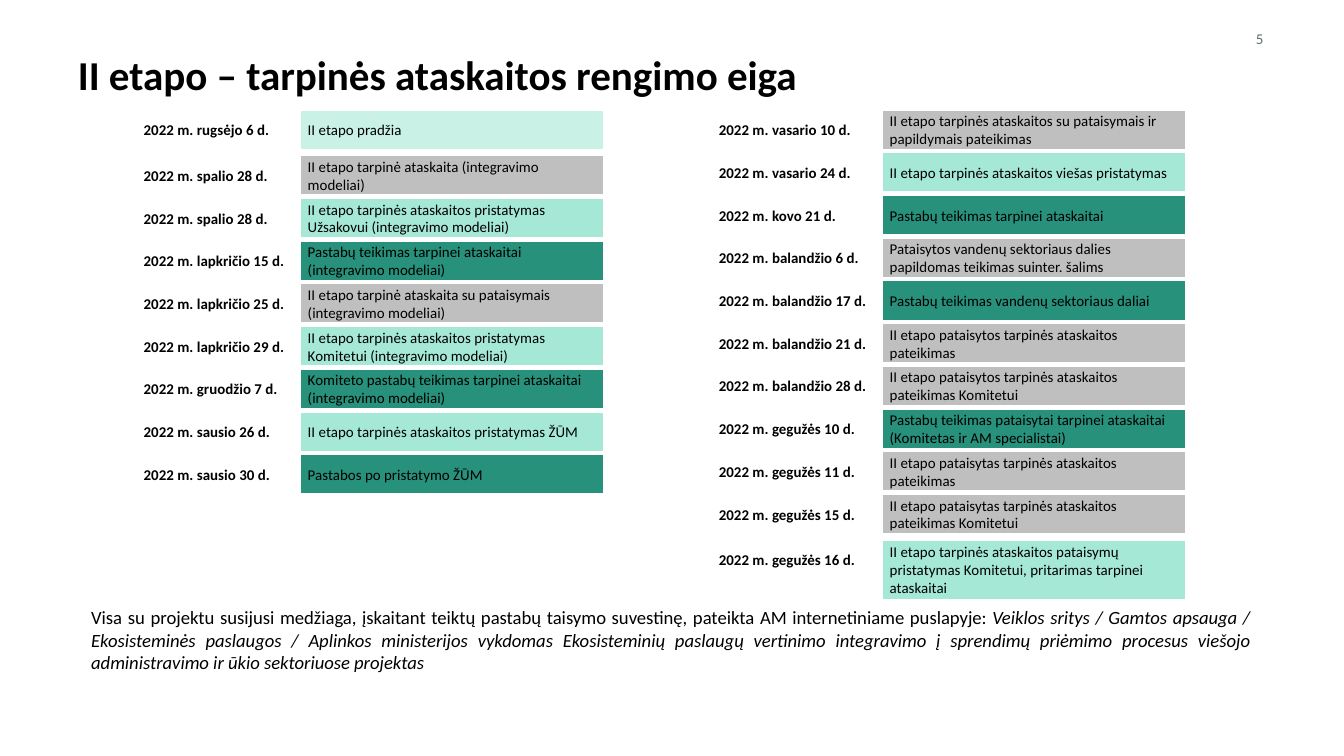
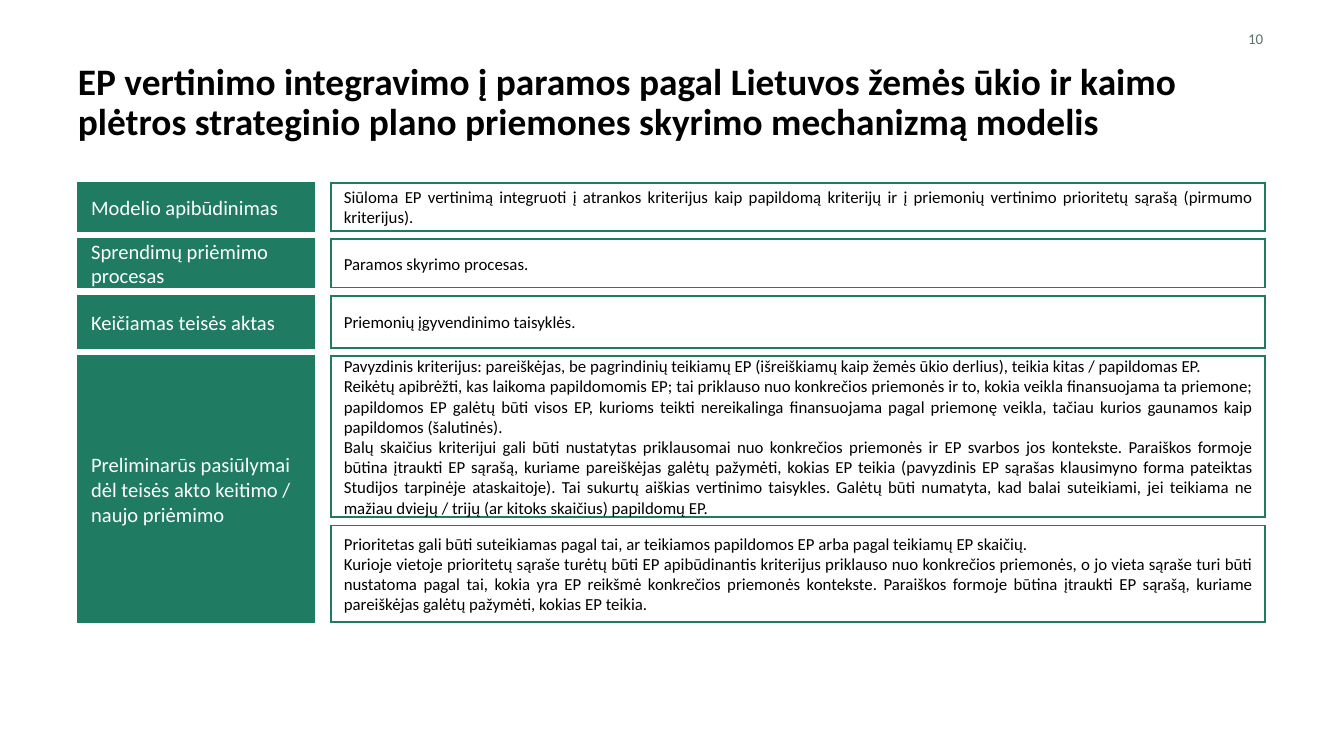
from lxml import etree
from pptx import Presentation, util as u
from pptx.dml.color import RGBColor
from pptx.enum import shapes, text
from pptx.oxml import ns

WIDTH, ASPECT = 10, 16 / 9
MARGIN, CONTENT_WIDTH = 0.58, 8.82
FONT = "Calibri"
COLOURS = {
    "text": "000000", "number": "5A7268", "white": "FFFFFF", "model": "1F7B61",
    "start": "C9F1E6", "report": "BFBFBF", "meeting": "A5E8D6", "remarks": "27917B",
}

TIMELINE_TITLE = "II etapo – tarpinės ataskaitos rengimo eiga"
TIMELINE = [
    {"date_left": 0.97, "event_left": 2.25, "groups": [
        (0.83, 0.27, [("2022 m. rugsėjo 6 d.", "start", "II etapo pradžia")]),
        (1.17, 0.27, [
            ("2022 m. spalio 28 d.", "report", "II etapo tarpinė ataskaita (integravimo modeliai)"),
            ("2022 m. spalio 28 d.", "meeting",
             "II etapo tarpinės ataskaitos pristatymas Užsakovui (integravimo modeliai)"),
            ("2022 m. lapkričio 15 d.", "remarks",
             "Pastabų teikimas tarpinei ataskaitai (integravimo modeliai)"),
            ("2022 m. lapkričio 25 d.", "report",
             "II etapo tarpinė ataskaita su pataisymais (integravimo modeliai)"),
            ("2022 m. lapkričio 29 d.", "meeting",
             "II etapo tarpinės ataskaitos pristatymas Komitetui (integravimo modeliai)"),
            ("2022 m. gruodžio 7 d.", "remarks",
             "Komiteto pastabų teikimas tarpinei ataskaitai (integravimo modeliai)"),
            ("2022 m. sausio 26 d.", "meeting", "II etapo tarpinės ataskaitos pristatymas ŽŪM"),
            ("2022 m. sausio 30 d.", "remarks", "Pastabos po pristatymo ŽŪM"),
        ]),
    ]},
    {"date_left": 5.25, "event_left": 6.58, "groups": [
        (0.83, 0.27, [
            ("2022 m. vasario 10 d.", "report",
             "II etapo tarpinės ataskaitos su pataisymais ir papildymais pateikimas"),
            ("2022 m. vasario 24 d.", "meeting", "II etapo tarpinės ataskaitos viešas pristatymas"),
            ("2022 m. kovo 21 d.", "remarks", "Pastabų teikimas tarpinei ataskaitai"),
            ("2022 m. balandžio 6 d.", "report",
             "Pataisytos vandenų sektoriaus dalies papildomas teikimas suinter. šalims"),
            ("2022 m. balandžio 17 d.", "remarks", "Pastabų teikimas vandenų sektoriaus daliai"),
            ("2022 m. balandžio 21 d.", "report",
             "II etapo pataisytos tarpinės ataskaitos pateikimas"),
            ("2022 m. balandžio 28 d.", "report",
             "II etapo pataisytos tarpinės ataskaitos pateikimas Komitetui"),
            ("2022 m. gegužės 10 d.", "remarks",
             "Pastabų teikimas pataisytai tarpinei ataskaitai (Komitetas ir AM specialistai)"),
            ("2022 m. gegužės 11 d.", "report",
             "II etapo pataisytas tarpinės ataskaitos pateikimas"),
            ("2022 m. gegužės 15 d.", "report",
             "II etapo pataisytas tarpinės ataskaitos pateikimas Komitetui"),
        ]),
        (4.03, 0.42, [
            ("2022 m. gegužės 16 d.", "meeting",
             "II etapo tarpinės ataskaitos pataisymų pristatymas Komitetui, "
             "pritarimas tarpinei ataskaitai"),
        ]),
    ]},
]
EVENT_WIDTH = 2.23
EVENT_STEP = (3.69 - 0.83) / 9
DATE_DROP = 0.02
SOURCE_NOTE = [
    ("Visa su projektu susijusi medžiaga, įskaitant teiktų pastabų taisymo suvestinę, "
     "pateikta AM internetiniame puslapyje: ", False),
    ("Veiklos sritys / Gamtos apsauga / Ekosisteminės paslaugos / Aplinkos ministerijos "
     "vykdomas Ekosisteminių paslaugų vertinimo integravimo į sprendimų priėmimo procesus "
     "viešojo administravimo ir ūkio sektoriuose projektas", True),
]

MODEL_TITLE = ("EP vertinimo integravimo į paramos pagal Lietuvos žemės ūkio ir kaimo plėtros "
               "strateginio plano priemones skyrimo mechanizmą modelis")
MODEL_ROWS = [
    ("Modelio apibūdinimas", [(0.36, [
        "Siūloma EP vertinimą integruoti į atrankos kriterijus kaip papildomą kriterijų ir į "
        "priemonių vertinimo prioritetų sąrašą (pirmumo kriterijus)."])]),
    ("Sprendimų priėmimo procesas", [(0.36, ["Paramos skyrimo procesas."])]),
    ("Keičiamas teisės aktas", [(0.39, ["Priemonių įgyvendinimo taisyklės."])]),
    ("Preliminarūs pasiūlymai dėl teisės akto keitimo / naujo priėmimo", [
        (1.2, [
            "Pavyzdinis kriterijus: pareiškėjas, be pagrindinių teikiamų EP (išreiškiamų kaip "
            "žemės ūkio derlius), teikia kitas / papildomas EP.",
            "Reikėtų apibrėžti, kas laikoma papildomomis EP; tai priklauso nuo konkrečios "
            "priemonės ir to, kokia veikla finansuojama ta priemone; papildomos EP galėtų būti "
            "visos EP, kurioms teikti nereikalinga finansuojama pagal priemonę veikla, tačiau "
            "kurios gaunamos kaip papildomos (šalutinės).",
            "Balų skaičius kriterijui gali būti nustatytas priklausomai nuo konkrečios priemonės "
            "ir EP svarbos jos kontekste. Paraiškos formoje būtina įtraukti EP sąrašą, kuriame "
            "pareiškėjas galėtų pažymėti, kokias EP teikia (pavyzdinis EP sąrašas klausimyno "
            "forma pateiktas Studijos tarpinėje ataskaitoje). Tai sukurtų aiškias vertinimo "
            "taisykles. Galėtų būti numatyta, kad balai suteikiami, jei teikiama ne mažiau "
            "dviejų / trijų (ar kitoks skaičius) papildomų EP."]),
        (0.72, [
            "Prioritetas gali būti suteikiamas pagal tai, ar teikiamos papildomos EP arba pagal "
            "teikiamų EP skaičių.",
            "Kurioje vietoje prioritetų sąraše turėtų būti EP apibūdinantis kriterijus priklauso "
            "nuo konkrečios priemonės, o jo vieta sąraše turi būti nustatoma pagal tai, kokia yra "
            "EP reikšmė konkrečios priemonės kontekste. Paraiškos formoje būtina įtraukti EP "
            "sąrašą, kuriame pareiškėjas galėtų pažymėti, kokias EP teikia."]),
    ]),
]
MODEL_TOP, MODEL_GAP = 1.36, 0.06
LABEL_WIDTH, DETAIL_LEFT, DETAIL_WIDTH = 1.76, 2.46, 6.95


def colour(name):
    return RGBColor.from_string(COLOURS[name])


def write(box, paragraphs, size, ink="text", align="LEFT", anchor="TOP", inset=None,
          bold=False, spacing=None):
    frame = box.text_frame
    frame.word_wrap = True
    frame.vertical_anchor = text.MSO_ANCHOR[anchor]
    if inset is not None:
        for side in ("left", "top", "right", "bottom"):
            setattr(frame, f"margin_{side}", u.Inches(inset))
    for index, runs in enumerate(paragraphs):
        para = frame.add_paragraph() if index else frame.paragraphs[0]
        para.alignment = text.PP_ALIGN[align]
        para.line_spacing = spacing
        for words, italic in [(runs, False)] if isinstance(runs, str) else runs:
            span = para.add_run()
            span.text = words
            span.font.color.rgb = colour(ink)
            look = {"name": FONT, "size": u.Pt(size), "bold": bold, "italic": italic}
            for key, value in look.items():
                setattr(span.font, key, value)


def add_text(page, place, paragraphs, size, **look):
    box = page.shapes.add_textbox(*map(u.Inches, place))
    write(box, paragraphs, size, **look)
    box.text_frame.auto_size = text.MSO_AUTO_SIZE.SHAPE_TO_FIT_TEXT


def add_box(page, place, paragraphs, size, line, fill=None, **look):
    box = page.shapes.add_shape(shapes.MSO_SHAPE.RECTANGLE, *map(u.Inches, place))
    box.shadow.inherit = False
    if fill:
        box.fill.solid()
        box.fill.fore_color.rgb = colour(fill)
    else:
        box.fill.background()
    box.line.color.rgb = colour(line)
    box.line.width = u.Pt(1)
    outline = box.element.spPr.find(ns.qn("a:ln"))
    etree.SubElement(outline, ns.qn("a:miter"), lim="800000")
    write(box, paragraphs, size, anchor="MIDDLE", **look)


def add_page(deck, title, top, height, size, number):
    page = deck.slides.add_slide(deck.slide_layouts[6])
    add_text(page, (MARGIN, top, CONTENT_WIDTH, height), [title], size,
             bold=True, inset=0, spacing=0.9)
    add_text(page, (7.15, 0.22, 2.25, 0.13), [number], 8, ink="number",
             align="RIGHT", anchor="MIDDLE", inset=0)
    return page


def build_timeline(deck):
    page = add_page(deck, TIMELINE_TITLE, 0.41, 0.34, 22, "5")
    for column in TIMELINE:
        left, event_left = column["date_left"], column["event_left"]
        for start, height, events in column["groups"]:
            for row, (date, kind, event) in enumerate(events):
                top = start + row * EVENT_STEP
                add_text(page, (left, top + DATE_DROP, event_left - left, 0.24), [date], 8,
                         bold=True)
                add_box(page, (event_left, top, EVENT_WIDTH, height), [event], 8,
                        line=kind, fill=kind, inset=0.04)
    add_text(page, (MARGIN, 4.46, CONTENT_WIDTH, 0.61), [SOURCE_NOTE], 10, align="JUSTIFY")


def build_model(deck):
    page = add_page(deck, MODEL_TITLE, 0.47, 0.61, 20, "10")
    top = MODEL_TOP
    for label, details in MODEL_ROWS:
        label_top = top
        for height, paragraphs in details:
            add_box(page, (DETAIL_LEFT, top, DETAIL_WIDTH, height), paragraphs, 9,
                    line="model", align="JUSTIFY")
            top += height + MODEL_GAP
        add_box(page, (MARGIN, label_top, LABEL_WIDTH, top - MODEL_GAP - label_top), [label], 11,
                line="model", fill="model", ink="white")


def main():
    deck = Presentation()
    deck.slide_width, deck.slide_height = u.Inches(WIDTH), u.Inches(WIDTH / ASPECT)
    build_timeline(deck)
    build_model(deck)
    deck.save("out.pptx")


if __name__ == "__main__":
    main()
